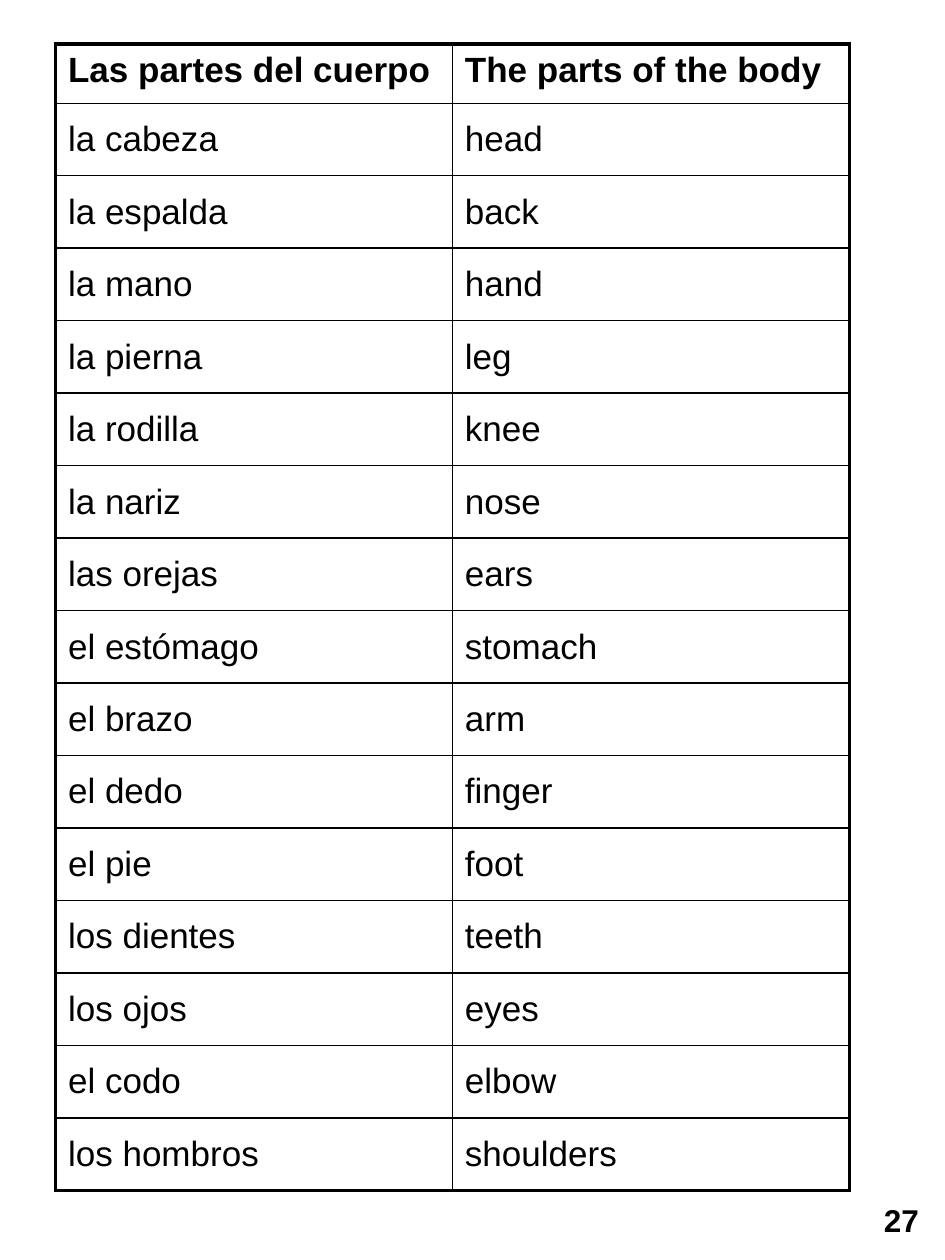
from lxml.etree import SubElement
from pptx import Presentation
from pptx.dml.color import RGBColor
from pptx.enum.shapes import MSO_SHAPE
from pptx.enum.text import MSO_ANCHOR, PP_ALIGN
from pptx.oxml.ns import qn
from pptx.util import Inches, Pt

BLACK = RGBColor(0, 0, 0)
FONT = "Arial"
THIN, THICK = 1, 2.25

WORDS = [
    ("Las partes del cuerpo", "The parts of the body"),
    ("la cabeza", "head"),
    ("la espalda", "back"),
    ("la mano", "hand"),
    ("la pierna", "leg"),
    ("la rodilla", "knee"),
    ("la nariz", "nose"),
    ("las orejas", "ears"),
    ("el estómago", "stomach"),
    ("el brazo", "arm"),
    ("el dedo", "finger"),
    ("el pie", "foot"),
    ("los dientes", "teeth"),
    ("los ojos", "eyes"),
    ("el codo", "elbow"),
    ("los hombros", "shoulders"),
]
PAGE = "27"

LEFT, TOP, WIDTH, HEIGHT = 0.44, 0.35, 6.3, 9.1
HEAD = 0.47


def write(para, text, size, bold):
    run = para.add_run()
    run.text = text
    font = run.font
    font.name, font.size, font.bold = FONT, Pt(size), bold
    font.color.rgb = BLACK


def space(para, percent):
    gap = SubElement(para._p.get_or_add_pPr(), qn("a:spcBef"))
    SubElement(gap, qn("a:spcPct"), val=str(percent * 1000))


def border(cell, sides):
    # Lines must come before the fill, so call this first
    props = cell._tc.get_or_add_tcPr()
    for side, width in sides.items():
        line = SubElement(props, qn("a:ln" + side), w=str(Pt(width)))
        fill = SubElement(line, qn("a:solidFill"))
        SubElement(fill, qn("a:srgbClr"), val=str(BLACK))


deck = Presentation()
deck.slide_width, deck.slide_height = Inches(7.5), Inches(10)
slide = deck.slides.add_slide(deck.slide_layouts[6])

# Word table
rows, cols = len(WORDS), len(WORDS[0])
table = slide.shapes.add_table(
    rows, cols, Inches(LEFT), Inches(TOP), Inches(WIDTH), Inches(HEIGHT)
).table
table.first_row = table.horz_banding = False
for col in table.columns:
    col.width = Inches(WIDTH / cols)

for r, pair in enumerate(WORDS):
    head = r == 0
    table.rows[r].height = Inches(HEAD if head else (HEIGHT - HEAD) / (rows - 1))
    for c, word in enumerate(pair):
        cell = table.cell(r, c)
        border(cell, {
            "L": THICK if c == 0 else THIN,
            "R": THICK if c == cols - 1 else THIN,
            "T": THICK if head else THIN,
            "B": THICK if r == rows - 1 else THIN,
        })
        cell.fill.background()
        cell.vertical_anchor = MSO_ANCHOR.TOP if head else MSO_ANCHOR.MIDDLE
        para = cell.text_frame.paragraphs[0]
        space(para, 20)
        write(para, word, 20, head)

# Page number
badge = slide.shapes.add_shape(
    MSO_SHAPE.ROUNDED_RECTANGLE, Inches(6.88), Inches(9.45), Inches(0.55), Inches(0.47)
)
badge.shadow.inherit = False
badge.fill.background()
badge.line.fill.background()
badge.text_frame.vertical_anchor = MSO_ANCHOR.MIDDLE
para = badge.text_frame.paragraphs[0]
para.alignment = PP_ALIGN.CENTER
write(para, PAGE, 18, True)

deck.save("out.pptx")
